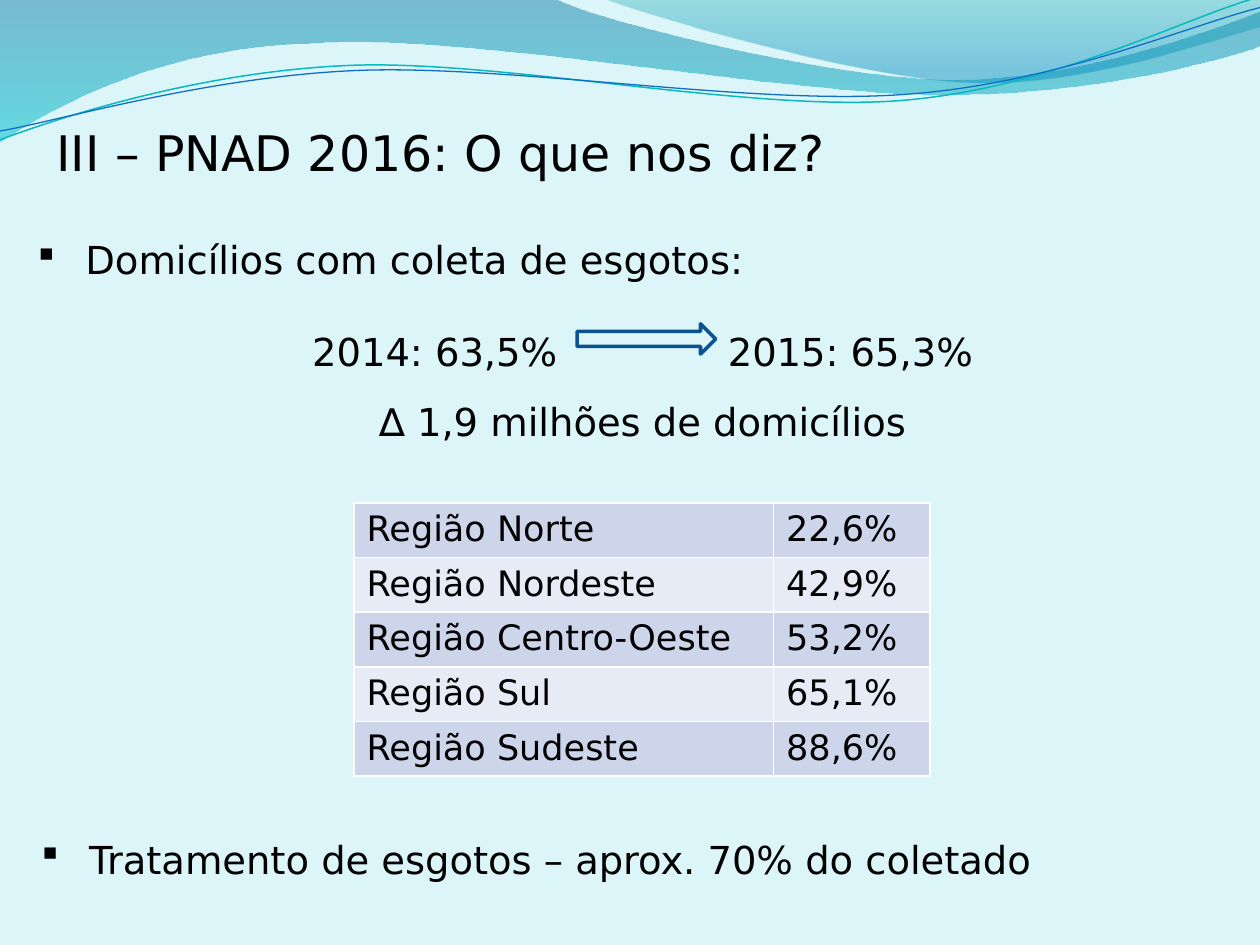
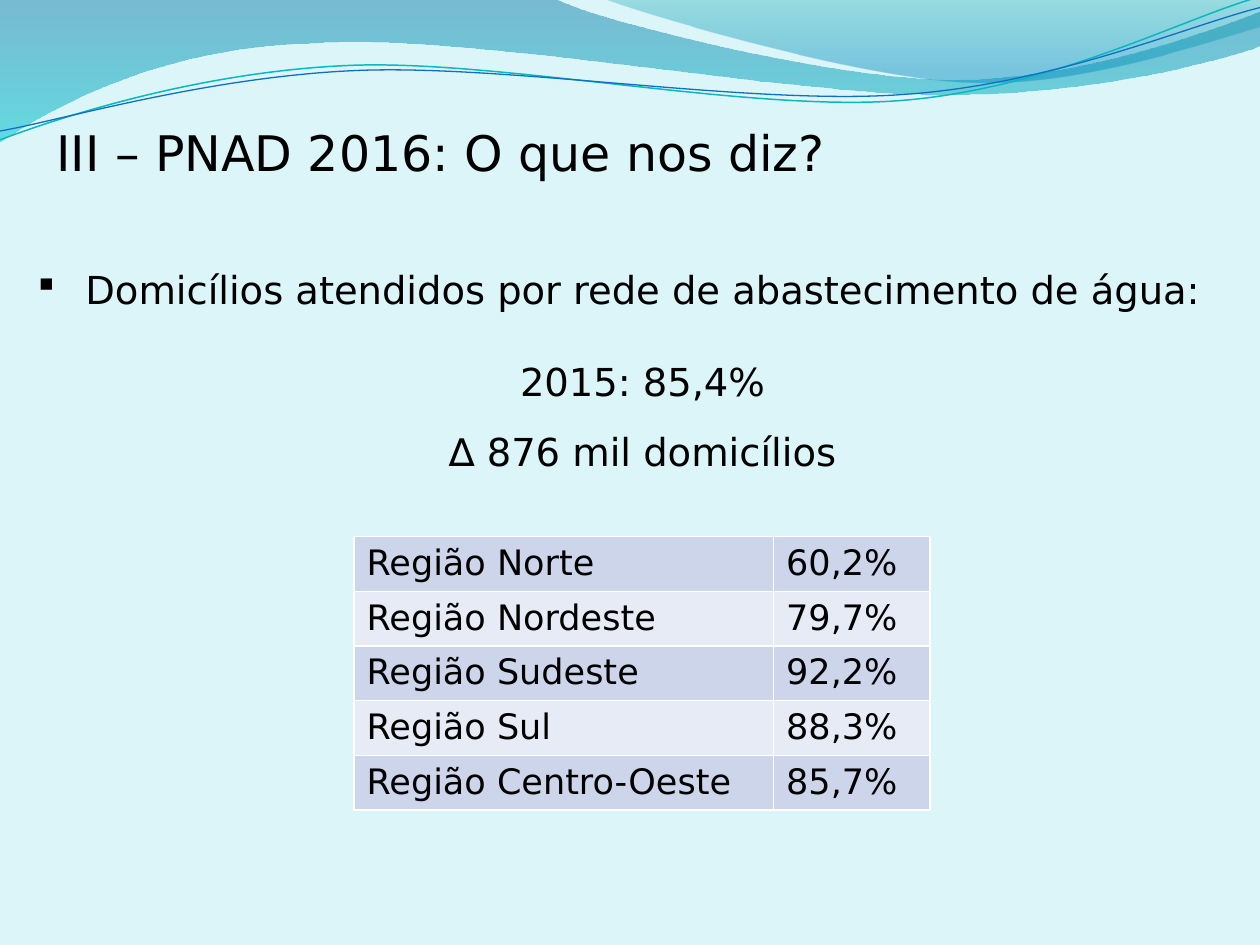
from lxml import etree
from pptx import Presentation
from pptx.dml.color import RGBColor
from pptx.enum.shapes import MSO_SHAPE as SHAPE
from pptx.enum.text import MSO_AUTO_SIZE as AUTO, PP_ALIGN as ALIGN
from pptx.oxml import parse_xml
from pptx.oxml.ns import qn
from pptx.util import Inches, Pt

# Shared style
FONT = "DejaVu Sans"
BACKGROUND, TEXT, ARROW = "DBF5F9", "000000", "0B5292"
ROW_FILLS = ("CCD5EA", "E7EBF5")
BORDER = "FFFFFF"
TITLE = "III – PNAD 2016: O que nos diz?"
DRAWING_NS = "http://schemas.openxmlformats.org/drawingml/2006/main"

# Wave outlines: two numbers make a line, six numbers make a Bézier curve.
# Each gradient stop is position %, colour, opacity %.
WAVE_BANDS = [
    ((0, 0),
     [(4.4, -0.01),
      (4.76, 0.17, 6.64, 0.63, 7.58, 0.63), (8.53, 0.63, 9.58, 0.26, 10, 0.09),
      (10.01, 0.36),
      (9.83, 0.44, 8.7, 0.76, 7.46, 0.75), (6.22, 0.75, 3.82, 0.28, 2.57, 0.34),
      (1.29, 0.36, 0.46, 0.83, -0.01, 1.13)],
     [(0, "0074A1", 45), (100, "00C6CF", 55)]),
    ((4.79, -0.01),
     [(5.09, 0.11, 6.82, 0.62, 7.69, 0.65), (8.56, 0.69, 9.61, 0.32, 10, 0.21),
      (10, 0)],
     [(0, "00A1A9", 30), (80, "008BBF", 45)]),
]
WAVE_LINES = [
    ((0, 1.11),
     [(0.48, 0.93, 1.58, 0.57, 2.77, 0.52), (3.95, 0.47, 5.93, 0.89, 7.13, 0.8),
      (8.33, 0.71, 9.38, 0.15, 9.98, -0.02)],
     "0AB8BF", 0.85),
    ((0, 1.04),
     [(0.47, 0.96, 1.64, 0.61, 2.83, 0.56), (4.03, 0.51, 5.97, 0.84, 7.17, 0.75),
      (8.36, 0.67, 9.41, 0.21, 10, 0.06)],
     "0F6FC6", 0.75),
]


def rgb(color):
    return RGBColor.from_string(color)


# Waves
def bend_curves(sp, segments):
    """Turn the three lines of each curved segment into one Bézier curve."""
    lines = iter(list(sp.element.iter(qn("a:lnTo"))))
    for seg in segments:
        line = next(lines)
        if len(seg) == 6:
            line.tag = qn("a:cubicBezTo")
            for _ in range(2):
                extra = next(lines)
                line.append(extra[0])
                extra.getparent().remove(extra)


def add_outline(s, start, segments, close):
    builder = s.shapes.build_freeform(Inches(start[0]), Inches(start[1]))
    points = [(Inches(x), Inches(y))
              for seg in segments for x, y in zip(seg[::2], seg[1::2])]
    builder.add_line_segments(points, close=close)
    sp = builder.convert_to_shape()
    bend_curves(sp, segments)
    sp.shadow.inherit = False
    sp.fill.background()
    return sp


def set_gradient(sp, stops):
    stop_xml = "".join(
        f'<a:gs pos="{pos * 1000}"><a:srgbClr val="{color}">'
        f'<a:alpha val="{alpha * 1000}"/></a:srgbClr></a:gs>'
        for pos, color, alpha in stops)
    gradient = parse_xml(
        f'<a:gradFill xmlns:a="{DRAWING_NS}" rotWithShape="1"><a:gsLst>{stop_xml}'
        '</a:gsLst><a:lin ang="5400000" scaled="0"/></a:gradFill>')
    no_fill = sp.element.spPr.find(qn("a:noFill"))
    no_fill.getparent().replace(no_fill, gradient)


def add_waves(s):
    for start, segments, stops in WAVE_BANDS:
        sp = add_outline(s, start, segments, close=True)
        sp.line.fill.background()
        set_gradient(sp, stops)
    for start, segments, color, width in WAVE_LINES:
        sp = add_outline(s, start, segments, close=False)
        sp.line.color.rgb = rgb(color)
        sp.line.width = Pt(width)


# Text
def add_run(p, text, size):
    r = p.add_run()
    r.text = text
    r.font.name = FONT
    r.font.size = Pt(size)
    r.font.color.rgb = rgb(TEXT)
    return r


def add_text_box(s, left, top, width, height):
    tf = s.shapes.add_textbox(
        Inches(left), Inches(top), Inches(width), Inches(height)).text_frame
    tf.word_wrap = True
    tf.auto_size = AUTO.SHAPE_TO_FIT_TEXT
    return tf


def add_bullet(p, text):
    p.line_spacing = 1.5
    pPr = p._p.get_or_add_pPr()
    pPr.set("marL", str(Inches(0.38)))
    pPr.set("indent", str(-Inches(0.38)))
    # In Wingdings this character is the small square
    etree.SubElement(pPr, qn("a:buFont")).set("typeface", "Wingdings")
    etree.SubElement(pPr, qn("a:buChar")).set("char", "§")
    add_run(p, text, 22)


def add_centered(tf, parts, line_spacing):
    """Add a centred line; parts are set apart by one widely spaced blank."""
    p = tf.add_paragraph()
    p.alignment = ALIGN.CENTER
    p.line_spacing = line_spacing
    for i, part in enumerate(parts):
        if i:
            gap = add_run(p, " ", 22)
            gap.font._element.set("spc", "9050")
        add_run(p, part, 22)


def add_summary(s, top, heading, years, change):
    tf = add_text_box(s, 0.2, top, 9.8, 1.95)
    add_bullet(tf.paragraphs[0], heading)
    add_centered(tf, years, 2.0)
    add_centered(tf, [change], 1.5)


# Table and arrow
def set_borders(cell):
    tcPr = cell._tc.get_or_add_tcPr()
    for i, side in enumerate(("lnL", "lnR", "lnT", "lnB")):
        tcPr.insert(i, parse_xml(
            f'<a:{side} xmlns:a="{DRAWING_NS}" w="{Pt(1)}"><a:solidFill>'
            f'<a:srgbClr val="{BORDER}"/></a:solidFill></a:{side}>'))


def add_region_table(s, top, regions):
    table = s.shapes.add_table(len(regions), 2, Inches(2.81), Inches(top),
                               Inches(4.57), Inches(2.17)).table
    for column, width in zip(table.columns, (3.33, 1.24)):
        column.width = Inches(width)
    for i, region in enumerate(regions):
        for j, text in enumerate(region):
            cell = table.cell(i, j)
            cell.fill.solid()
            cell.fill.fore_color.rgb = rgb(ROW_FILLS[i % 2])
            set_borders(cell)
            add_run(cell.text_frame.paragraphs[0], text, 20)


def add_arrow(s):
    sp = s.shapes.add_shape(SHAPE.RIGHT_ARROW, Inches(4.58), Inches(2.57),
                            Inches(1.1), Inches(0.24))
    sp.shadow.inherit = False
    sp.fill.background()
    sp.line.color.rgb = rgb(ARROW)
    sp.line.width = Pt(2)


def new_slide(prs):
    s = prs.slides.add_slide(prs.slide_layouts[6])
    s.background.fill.solid()
    s.background.fill.fore_color.rgb = rgb(BACKGROUND)
    add_waves(s)
    tf = add_text_box(s, 0.35, 0.92, 8.66, 0.57)
    add_run(tf.paragraphs[0], TITLE, 28)
    return s


def main():
    prs = Presentation()
    prs.slide_width, prs.slide_height = Inches(10), Inches(7.5)

    # Sewage collection
    s = new_slide(prs)
    add_summary(s, 1.64, "Domicílios com coleta de esgotos:",
                ["2014: 63,5%", "2015: 65,3%"], "∆ 1,9 milhões de domicílios")
    add_region_table(s, 3.99, [
        ("Região Norte", "22,6%"), ("Região Nordeste", "42,9%"),
        ("Região Centro-Oeste", "53,2%"), ("Região Sul", "65,1%"),
        ("Região Sudeste", "88,6%")])
    add_arrow(s)
    tf = add_text_box(s, 0.23, 6.4, 9.8, 0.58)
    add_bullet(tf.paragraphs[0], "Tratamento de esgotos – aprox. 70% do coletado")

    # Water supply
    s = new_slide(prs)
    add_summary(s, 1.88, "Domicílios atendidos por rede de abastecimento de água:",
                ["2015: 85,4%"], "∆ 876 mil domicílios")
    add_region_table(s, 4.26, [
        ("Região Norte", "60,2%"), ("Região Nordeste", "79,7%"),
        ("Região Sudeste", "92,2%"), ("Região Sul", "88,3%"),
        ("Região Centro-Oeste", "85,7%")])

    prs.save("out.pptx")


if __name__ == "__main__":
    main()
